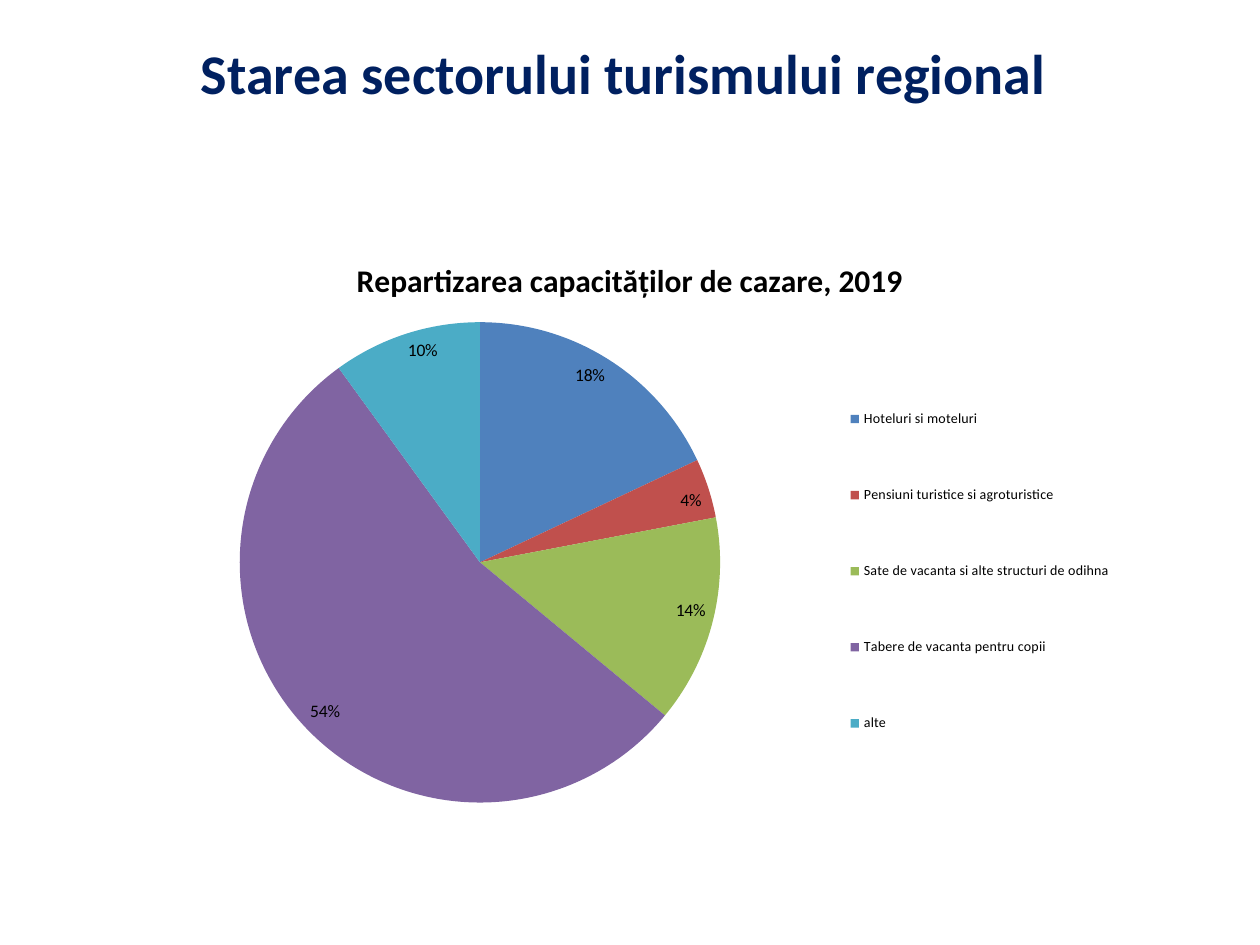
from pptx import Presentation
from pptx.chart.data import CategoryChartData
from pptx.dml.color import RGBColor
from pptx.enum.chart import XL_CHART_TYPE as ChartType, XL_LABEL_POSITION as LabelPosition
from pptx.enum.chart import XL_LEGEND_POSITION as LegendPosition
from pptx.enum.text import MSO_ANCHOR as Anchor, PP_ALIGN as Align
from pptx.oxml import parse_xml
from pptx.oxml.ns import nsdecls
from pptx.util import Inches, Pt

NAVY = RGBColor(0x00, 0x20, 0x60)
BLACK = RGBColor(0x00, 0x00, 0x00)
BLUE = RGBColor(0x4F, 0x81, 0xBD)
RED = RGBColor(0xC0, 0x50, 0x4D)
GREEN = RGBColor(0x9B, 0xBB, 0x59)
PURPLE = RGBColor(0x80, 0x64, 0xA2)
TEAL = RGBColor(0x4B, 0xAC, 0xC6)

LODGING = [
    ("Hoteluri si moteluri", 18, BLUE),
    ("Pensiuni turistice si agroturistice", 4, RED),
    ("Sate de vacanta si alte structuri de odihna", 14, GREEN),
    ("Tabere de vacanta pentru copii", 54, PURPLE),
    ("alte", 10, TEAL),
]


class SlideBuilder:
    font_name = "Calibri"
    columns, rows = 100, 75

    def __init__(self, deck):
        self.slide = deck.slides.add_slide(deck.slide_layouts[6])
        self.column = deck.slide_width / self.columns
        self.row = deck.slide_height / self.rows

    def area(self, left, top, width, height):
        return (int(left * self.column), int(top * self.row),
                int(width * self.column), int(height * self.row))

    def style(self, font, size, color=BLACK, bold=False):
        font.name = self.font_name
        font.size = Pt(size)
        font.bold = bold
        font.color.rgb = color

    def heading(self, text, *cells):
        frame = self.slide.shapes.add_textbox(*self.area(*cells)).text_frame
        frame.word_wrap = True
        frame.vertical_anchor = Anchor.MIDDLE
        frame.margin_top = 0
        frame.margin_bottom = Inches(0.52)
        frame.margin_right = Inches(0.2)
        frame.text = text
        paragraph = frame.paragraphs[0]
        paragraph.alignment = Align.CENTER
        self.style(paragraph.runs[0].font, 32, NAVY, True)

    def layout(self, x, y, width, height, target=""):
        return parse_xml(
            f'<c:layout {nsdecls("c")}><c:manualLayout>{target}'
            '<c:xMode val="edge"/><c:yMode val="edge"/>'
            f'<c:x val="{x}"/><c:y val="{y}"/><c:w val="{width}"/><c:h val="{height}"/>'
            '</c:manualLayout></c:layout>')

    def pie(self, title, slices, *cells):
        shares = CategoryChartData()
        shares.categories = [name for name, _, _ in slices]
        shares.add_series("Series 1", [value for _, value, _ in slices])
        chart = self.slide.shapes.add_chart(ChartType.PIE, *self.area(*cells), shares).chart
        self.style(chart.font, 10)

        chart.has_title = True
        chart.chart_title.include_in_layout = False
        chart.chart_title.text_frame.text = title
        self.style(chart.chart_title.text_frame.paragraphs[0].runs[0].font, 18, bold=True)

        plot = chart.plots[0]
        plot.vary_by_categories = True
        for index, (_, _, color) in enumerate(slices):
            fill = plot.series[0].points[index].format.fill
            fill.solid()
            fill.fore_color.rgb = color

        plot.has_data_labels = True
        labels = plot.data_labels
        labels.show_percentage = True
        labels.show_value = False
        labels.number_format = "0%"
        labels.number_format_is_linked = False
        labels.position = LabelPosition.INSIDE_END
        self.style(labels.font, 10)

        chart.has_legend = True
        legend = chart.legend
        legend.position = LegendPosition.RIGHT
        legend.include_in_layout = False
        self.style(legend.font, 8)

        plot_area = chart.element.chart.plotArea
        for old in plot_area.findall(plot_area.tag.replace("plotArea", "layout")):
            plot_area.remove(old)
        plot_area.insert(0, self.layout(0.14, 0.15, 0.45, 0.82, '<c:layoutTarget val="inner"/>'))
        legend_position = chart.element.find(".//c:legendPos", chart.element.nsmap)
        legend_position.addnext(self.layout(0.67, 0.2, 0.29, 0.75))


def main():
    deck = Presentation()
    deck.slide_width, deck.slide_height = Inches(10), Inches(7.5)
    builder = SlideBuilder(deck)
    builder.heading("Starea sectorului turismului regional", 5, 4.4, 90, 7.9)
    builder.pie("Repartizarea capacităților de cazare, 2019", LODGING, 5.9, 18.6, 88.2, 46.5)
    deck.save("out.pptx")


if __name__ == "__main__":
    main()
